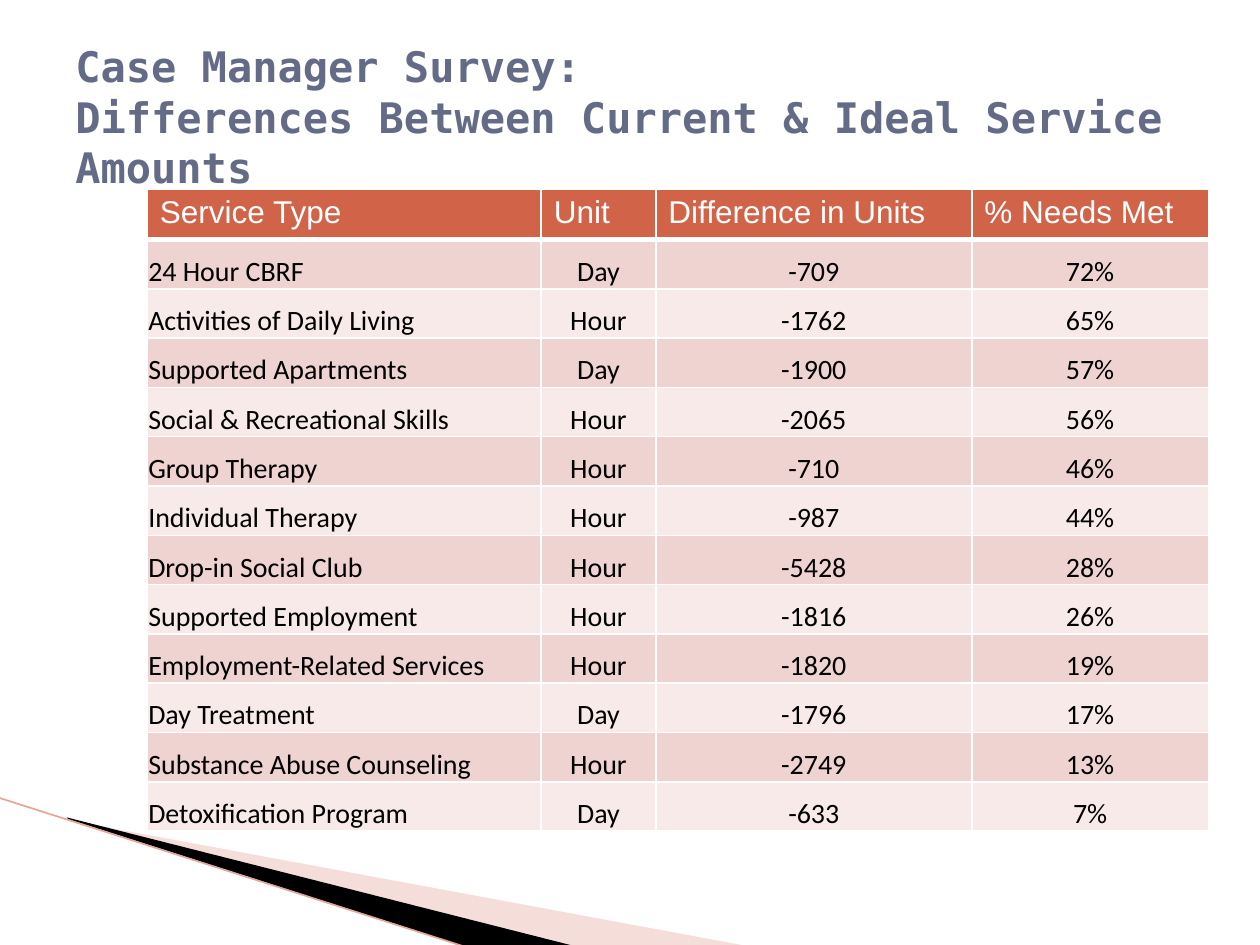
from lxml.etree import SubElement
from pptx import Presentation
from pptx.dml.color import RGBColor
from pptx.enum.shapes import MSO_CONNECTOR
from pptx.enum.text import MSO_ANCHOR, PP_ALIGN
from pptx.oxml.ns import qn
from pptx.util import Cm, Pt

TITLE = "Case Manager Survey:\vDifferences Between Current & Ideal Service Amounts"
HEAD = ("Service Type", "Unit", "Difference in Units", "% Needs Met")
ROWS = [
    ("24 Hour CBRF", "Day", "-709", "72%"),
    ("Activities of Daily Living", "Hour", "-1762", "65%"),
    ("Supported Apartments", "Day", "-1900", "57%"),
    ("Social & Recreational Skills", "Hour", "-2065", "56%"),
    ("Group Therapy", "Hour", "-710", "46%"),
    ("Individual Therapy", "Hour", "-987", "44%"),
    ("Drop-in Social Club", "Hour", "-5428", "28%"),
    ("Supported Employment", "Hour", "-1816", "26%"),
    ("Employment-Related Services", "Hour", "-1820", "19%"),
    ("Day Treatment", "Day", "-1796", "17%"),
    ("Substance Abuse Counseling", "Hour", "-2749", "13%"),
    ("Detoxification Program", "Day", "-633", "7%"),
]
WIDTHS = (7.94, 2.31, 6.37, 4.77)
LEFT, TOP, HEIGHT = 2.97, 3.81, 12.93
THEME = {
    "title": {"font": "DejaVu Sans Mono", "size": 24, "color": "646B86", "bold": True},
    "head": {"font": "Arial", "size": 18, "color": "FFFFFF"},
    "body": {"font": "Calibri", "size": 16, "color": "000000"},
    "top": "D16349",
    "bands": ("EED3D0", "F7EAE9"),
    "rule": "FFFFFF",
    "edge": "E3A59C",
}
WEDGES = [
    ([(1.4, 16.54), (15.11, 19.08), (11.58, 19.08), (1.4, 16.51)], "E7ACA4", 40),
    ([(1.35, 16.48), (11.61, 19.08), (9.45, 19.1), (1.37, 16.51)], "000000", 100),
]
EDGE = (-0.03, 16.08, 9.42, 19.1)


def paint(fill, color):
    fill.solid()
    fill.fore_color.rgb = RGBColor.from_string(color)


def write(frame, text, *, font, size, color, bold=False, align=PP_ALIGN.LEFT):
    para = frame.paragraphs[0]
    para.text = text
    para.alignment = align
    for run in para.runs:
        run.font.name = font
        run.font.size = Pt(size)
        run.font.bold = bold
        run.font.color.rgb = RGBColor.from_string(color)


def wedge(shapes, points, color, alpha):
    first, *rest = [(Cm(x), Cm(y)) for x, y in points]
    path = shapes.build_freeform(*first)
    path.add_line_segments(rest, close=True)
    shape = path.convert_to_shape()
    shape.shadow.inherit = False
    shape.line.fill.background()
    paint(shape.fill, color)
    if alpha < 100:
        tint = shape.fill._xPr.find(".//" + qn("a:srgbClr"))
        SubElement(tint, qn("a:alpha"), val=str(alpha * 1000))


def border(cell, base):
    props = cell._tc.get_or_add_tcPr()
    for side, width in (("L", 1), ("R", 1), ("T", 1), ("B", base)):
        line = SubElement(props, qn("a:ln" + side), w=str(Pt(width)))
        fill = SubElement(line, qn("a:solidFill"))
        SubElement(fill, qn("a:srgbClr"), val=THEME["rule"])


def grid(shapes):
    count = len(ROWS) + 1
    frame = shapes.add_table(count, len(HEAD), Cm(LEFT), Cm(TOP), Cm(sum(WIDTHS)), Cm(HEIGHT))
    table = frame.table
    for col, width in zip(table.columns, WIDTHS):
        col.width = Cm(width)
    for r, row in enumerate([HEAD] + ROWS):
        table.rows[r].height = Cm(HEIGHT / count)
        for c, text in enumerate(row):
            cell = table.cell(r, c)
            border(cell, 1 if r else 3)
            if r == 0:
                paint(cell.fill, THEME["top"])
                write(cell.text_frame, text, **THEME["head"])
                continue
            paint(cell.fill, THEME["bands"][(r - 1) % 2])
            cell.vertical_anchor = MSO_ANCHOR.BOTTOM
            cell.margin_left = cell.margin_right = cell.margin_top = Cm(0.02)
            cell.margin_bottom = 0
            align = PP_ALIGN.CENTER if c else PP_ALIGN.LEFT
            write(cell.text_frame, text, align=align, **THEME["body"])


def main():
    deck = Presentation()
    deck.slide_width, deck.slide_height = Cm(25.4), Cm(19.05)
    shapes = deck.slides.add_slide(deck.slide_layouts[6]).shapes
    for item in WEDGES:
        wedge(shapes, *item)
    edge = shapes.add_connector(MSO_CONNECTOR.STRAIGHT, *map(Cm, EDGE))
    edge.line.width = Pt(0.95)
    paint(edge.line.fill, THEME["edge"])
    SubElement(edge._element.spPr, qn("a:effectLst"))
    box = shapes.add_textbox(Cm(1.27), Cm(0.76), Cm(22.86), Cm(3.18)).text_frame
    box.word_wrap = True
    box.vertical_anchor = MSO_ANCHOR.MIDDLE
    write(box, TITLE, **THEME["title"])
    grid(shapes)
    deck.save("out.pptx")


if __name__ == "__main__":
    main()
